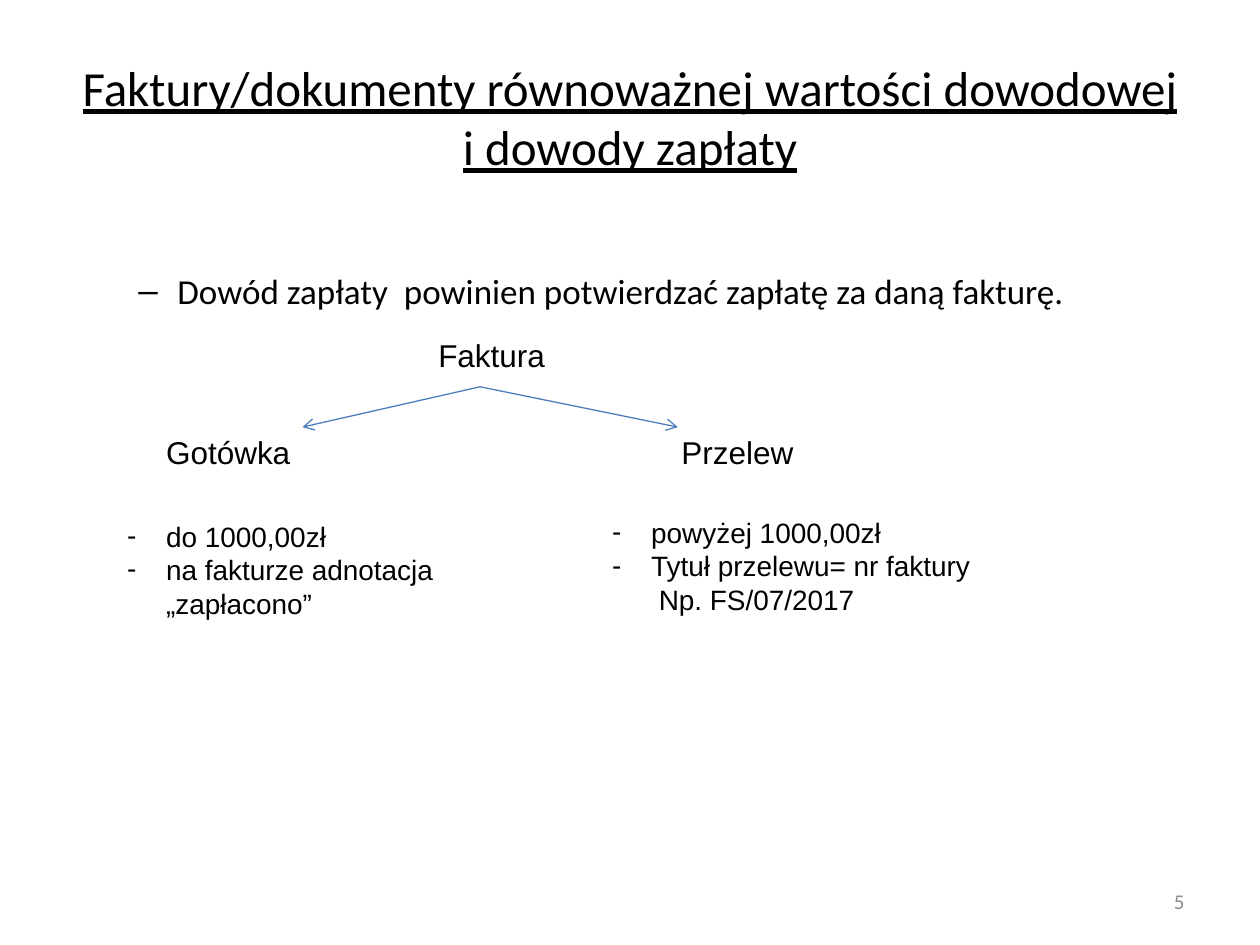
from dataclasses import dataclass

from pptx import Presentation
from pptx.dml.color import RGBColor
from pptx.enum.shapes import MSO_CONNECTOR as Connector
from pptx.enum.text import MSO_ANCHOR as Anchor, MSO_AUTO_SIZE as AutoSize, PP_ALIGN as Align
from pptx.oxml.ns import qn
from pptx.util import Inches, Pt


@dataclass(frozen=True)
class Theme:
    heading_font: str = "Calibri"
    label_font: str = "Arial"
    ink: str = "000000"
    muted: str = "8C8C8C"
    accent: str = "4B7EBC"
    title_size: int = 28
    body_size: int = 20
    label_size: int = 18
    list_size: int = 16
    number_size: int = 12
    line_width: float = 0.75


def write_text(paragraph, text, *, font, size, color, align=Align.LEFT,
               underline=None, bullet=None, margin=0, indent=0):
    """Fill a paragraph and format it; margin and indent are in inches."""
    paragraph.alignment = align
    properties = paragraph._p.get_or_add_pPr()
    properties.set("marL", str(Inches(margin)))
    properties.set("indent", str(Inches(indent)))
    if bullet:
        properties.makeelement(qn("a:buFont"), {})
        bullet_font = properties.makeelement(qn("a:buFont"), {"typeface": "Arial"})
        bullet_mark = properties.makeelement(qn("a:buChar"), {"char": bullet})
        properties.extend([bullet_font, bullet_mark])
    run = paragraph.add_run()
    run.text = text
    run.font.name = font
    run.font.size = Pt(size)
    run.font.underline = underline
    run.font.color.rgb = RGBColor.from_string(color)


class SlideBuilder:
    def __init__(self, slide, theme):
        self.slide = slide
        self.theme = theme

    def title(self, text, left, top, width, height):
        shape = self.slide.shapes.title
        shape.left, shape.top = Inches(left), Inches(top)
        shape.width, shape.height = Inches(width), Inches(height)
        frame = shape.text_frame
        frame.word_wrap = True
        frame.auto_size = AutoSize.NONE
        frame.vertical_anchor = Anchor.MIDDLE
        write_text(frame.paragraphs[0], text, font=self.theme.heading_font,
                   size=self.theme.title_size, color=self.theme.ink,
                   align=Align.CENTER, underline=True)

    def text(self, items, left, top, width, height, anchor=Anchor.TOP, **style):
        """Add a text box; each item is a text and its own paragraph format."""
        shape = self.slide.shapes.add_textbox(
            Inches(left), Inches(top), Inches(width), Inches(height))
        frame = shape.text_frame
        frame.word_wrap = True
        frame.vertical_anchor = anchor
        for index, (text, extra) in enumerate(items):
            paragraph = frame.add_paragraph() if index else frame.paragraphs[0]
            write_text(paragraph, text, **{"color": self.theme.ink, **style, **extra})

    def label(self, text, left, top, width):
        self.text([(text, {})], left, top, width, 0.4,
                  font=self.theme.label_font, size=self.theme.label_size)

    def dash_list(self, texts, left, top, width, closing=None):
        dash = {"bullet": "-", "margin": 0.31, "indent": -0.31}
        items = [(text, dash) for text in texts]
        if closing:
            items.append((closing, {"margin": 0.37}))
        self.text(items, left, top, width, 0.91,
                  font=self.theme.label_font, size=self.theme.list_size)

    def arrow(self, start, end):
        connector = self.slide.shapes.add_connector(
            Connector.STRAIGHT, *map(Inches, (*start, *end)))
        connector.line.color.rgb = RGBColor.from_string(self.theme.accent)
        connector.line.width = Pt(self.theme.line_width)
        line = connector.line._get_or_add_ln()
        line.append(line.makeelement(qn("a:tailEnd"), {"type": "arrow"}))
        properties = connector._element.spPr
        properties.append(properties.makeelement(qn("a:effectLst"), {}))


def main():
    presentation = Presentation()
    presentation.slide_width, presentation.slide_height = Inches(10), Inches(7.5)
    title_only = presentation.slide_layouts[5]
    theme = Theme()
    builder = SlideBuilder(presentation.slides.add_slide(title_only), theme)

    # Title and main statement
    builder.title("Faktury/dokumenty równoważnej wartości dowodowej i dowody zapłaty",
                  0.5, 0.3, 9, 1.25)
    statement = "Dowód zapłaty  powinien potwierdzać zapłatę za daną fakturę."
    builder.text([(statement, {"bullet": "–", "margin": 0.81, "indent": -0.31})],
                 0.5, 2.09, 9, 0.45, font=theme.heading_font,
                 size=theme.body_size, align=Align.JUSTIFY)

    # Invoice and the two ways to pay it
    builder.label("Faktura", 3.38, 2.62, 1.39)
    for text, left in (("Gotówka", 1.22), ("Przelew", 5.31)):
        builder.label(text, left, 3.39, 2.36)
    for end_x in (2.4, 5.38):
        builder.arrow((3.81, 3.07), (end_x, 3.39))

    # Conditions for cash and transfer
    builder.dash_list(["do 1000,00zł", "na fakturze adnotacja „zapłacono”"],
                      0.91, 4.07, 2.91)
    builder.dash_list(["powyżej 1000,00zł", "Tytuł przelewu= nr faktury"],
                      4.76, 4.04, 3.62, closing="Np. FS/07/2017")

    # Slide number
    builder.text([("5", {})], 7.17, 6.95, 2.33, 0.4, anchor=Anchor.MIDDLE,
                 font=theme.heading_font, size=theme.number_size,
                 color=theme.muted, align=Align.RIGHT)

    presentation.save("out.pptx")


if __name__ == "__main__":
    main()
